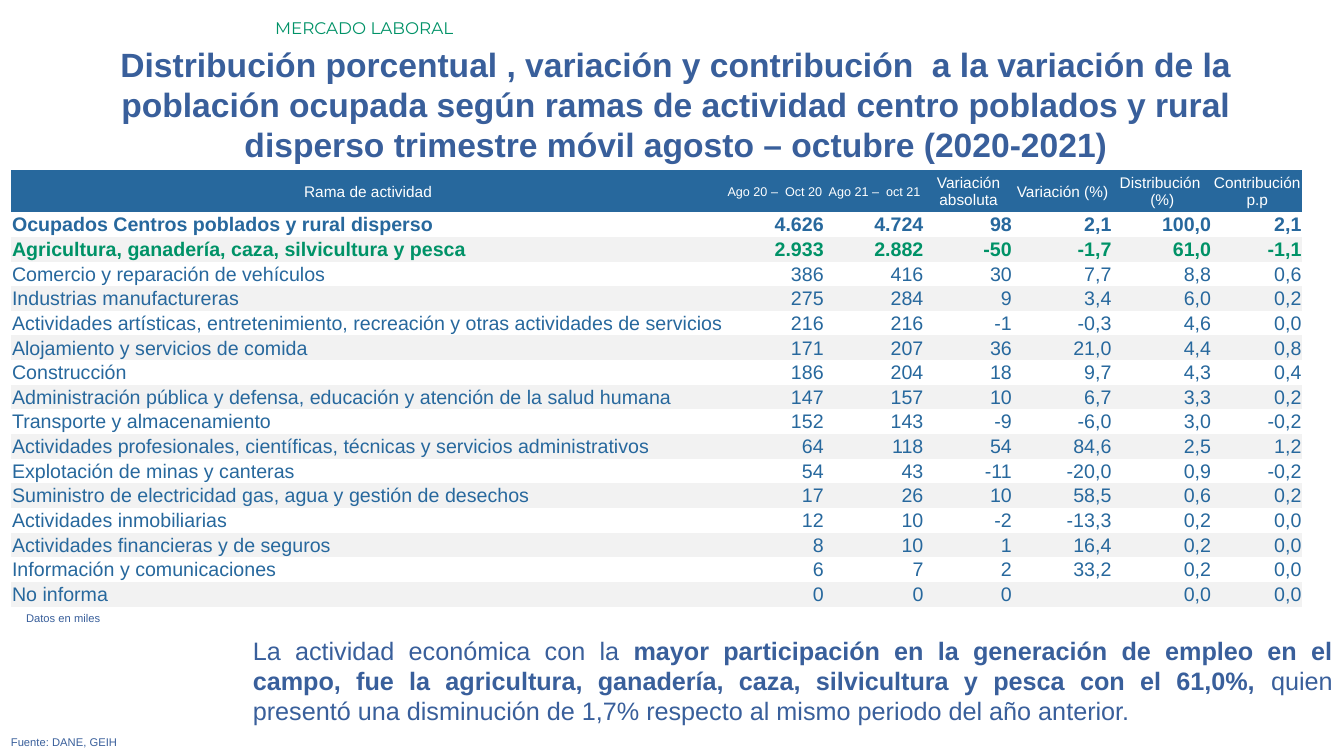
from pptx import Presentation
from pptx.dml.color import RGBColor
from pptx.enum.text import MSO_ANCHOR, MSO_AUTO_SIZE, PP_ALIGN
from pptx.util import Pt

LEFT, CENTER, RIGHT, JUSTIFY = PP_ALIGN.LEFT, PP_ALIGN.CENTER, PP_ALIGN.RIGHT, PP_ALIGN.JUSTIFY
TOP, MIDDLE = MSO_ANCHOR.TOP, MSO_ANCHOR.MIDDLE
FIXED = MSO_AUTO_SIZE.NONE
COLORS = {"navy": "395F9B", "blue": "27689D", "green": "009267", "white": "FFFFFF", "band": "F2F2F2"}
NO_STYLE_NO_GRID = "{2D5ABB26-0587-4C30-8999-92F81FD0307C}"


def format_run(r, color, **fmt):
    for name, value in ({"name": "Arial", "bold": False} | fmt).items():
        setattr(r.font, name, value)
    r.font.color.rgb = RGBColor.from_string(COLORS[color])


def fill_text(sp, box, parts, align, color, **fmt):
    sp.left, sp.top, sp.width, sp.height = (Pt(v) for v in box)
    tf = sp.text_frame
    tf.word_wrap, tf.auto_size, tf.vertical_anchor = True, FIXED, TOP
    p = tf.paragraphs[0]
    p.alignment = align
    for text, bold in parts:
        r = p.add_run()
        r.text = text
        format_run(r, color, bold=bold, **fmt)


prs = Presentation()
prs.slide_width, prs.slide_height = Pt(960), Pt(540)
s = prs.slides.add_slide(prs.slide_layouts[5])

# Title
fill_text(s.shapes.title, (32.4, 27.4, 900.7, 94.3),
          [("Distribución porcentual , variación y contribución  a la variación de la población ocupada "
            "según ramas de actividad centro poblados y rural disperso trimestre móvil agosto – octubre "
            "(2020-2021)", True)],
          CENTER, "navy", size=Pt(24))

# Section label, conclusion and notes
conclusion = [
    ("La actividad económica con la ", False),
    ("mayor participación en la generación de empleo en el campo, fue la agricultura, ganadería, caza, "
     "silvicultura y pesca con el 61,0%, ", True),
    ("quien presentó una disminución de 1,7% respecto al mismo periodo del año anterior.", False),
]
texts = [
    ((189.4, 9.4, 770.4, 21.6), [("MERCADO LABORAL", False)], LEFT, "green", 12, "Montserrat"),
    ((173.5, 450, 785.5, 72.7), conclusion, JUSTIFY, "navy", 18, "Arial"),
    ((0.7, 522, 929.5, 17.3), [("Fuente: DANE, GEIH", False)], JUSTIFY, "navy", 8, "Arial"),
    ((11.5, 433.4, 929.5, 17.3), [("Datos en miles", False)], JUSTIFY, "navy", 8, "Arial"),
]
for box, parts, align, color, size, font in texts:
    fill_text(s.shapes.add_textbox(0, 0, 0, 0), box, parts, align, color, size=Pt(size), name=font)

# Table of employment by branch of activity
rows = [
    ("Rama de actividad", "Ago 20 –  Oct 20", "Ago 21 –  oct 21", "Variación\vabsoluta",
     "Variación (%)", "Distribución \n(%)", "Contribución \np.p"),
    ("Ocupados Centros poblados y rural disperso", "4.626", "4.724", "98", "2,1", "100,0", "2,1"),
    ("Agricultura, ganadería, caza, silvicultura y pesca", "2.933", "2.882", "-50", "-1,7", "61,0", "-1,1"),
    ("Comercio y reparación de vehículos", "386", "416", "30", "7,7", "8,8", "0,6"),
    ("Industrias manufactureras", "275", "284", "9", "3,4", "6,0", "0,2"),
    ("Actividades artísticas, entretenimiento, recreación y otras actividades de servicios",
     "216", "216", "-1", "-0,3", "4,6", "0,0"),
    ("Alojamiento y servicios de comida", "171", "207", "36", "21,0", "4,4", "0,8"),
    ("Construcción", "186", "204", "18", "9,7", "4,3", "0,4"),
    ("Administración pública y defensa, educación y atención de la salud humana",
     "147", "157", "10", "6,7", "3,3", "0,2"),
    ("Transporte y almacenamiento", "152", "143", "-9", "-6,0", "3,0", "-0,2"),
    ("Actividades profesionales, científicas, técnicas y servicios administrativos",
     "64", "118", "54", "84,6", "2,5", "1,2"),
    ("Explotación de minas y canteras", "54", "43", "-11", "-20,0", "0,9", "-0,2"),
    ("Suministro de electricidad gas, agua y gestión de desechos", "17", "26", "10", "58,5", "0,6", "0,2"),
    ("Actividades inmobiliarias", "12", "10", "-2", "-13,3", "0,2", "0,0"),
    ("Actividades financieras y de seguros", "8", "10", "1", "16,4", "0,2", "0,0"),
    ("Información y comunicaciones", "6", "7", "2", "33,2", "0,2", "0,0"),
    ("No informa", "0", "0", "0", "", "0,0", "0,0"),
]
widths = [510, 71.2, 71.2, 63.2, 71.2, 71.2, 64.6]
header_height, row_height = 30, 17.63
frame = s.shapes.add_table(len(rows), len(widths), Pt(7.9), Pt(121.6), Pt(sum(widths)),
                           Pt(header_height + row_height * (len(rows) - 1)))
table = frame.table
table.first_row = table.horz_banding = False
table._tbl.tblPr[0].text = NO_STYLE_NO_GRID
for column, width in zip(table.columns, widths):
    column.width = Pt(width)

for i, values in enumerate(rows):
    table.rows[i].height = Pt(row_height if i else header_height)
    fill = "blue" if i == 0 else "band" if i % 2 == 0 else None
    color = {0: "white", 2: "green"}.get(i, "blue")
    for j, value in enumerate(values):
        cell = table.cell(i, j)
        cell.margin_left = cell.margin_right = cell.margin_top = Pt(0.7)
        cell.margin_bottom = 0
        cell.vertical_anchor = MIDDLE
        if fill:
            cell.fill.solid()
            cell.fill.fore_color.rgb = RGBColor.from_string(COLORS[fill])
        else:
            cell.fill.background()
        size = 14 if i else 9 if j in (1, 2) else 11
        cell.text = value
        for p in cell.text_frame.paragraphs:
            p.alignment = CENTER if i == 0 else RIGHT if j else LEFT
            for r in p.runs:
                format_run(r, color, size=Pt(size), bold=i in (1, 2))
            if not value:  # keeps the empty cell from stretching its row
                p._p.get_or_add_endParaRPr().set("sz", str(size * 100))

prs.save("out.pptx")
